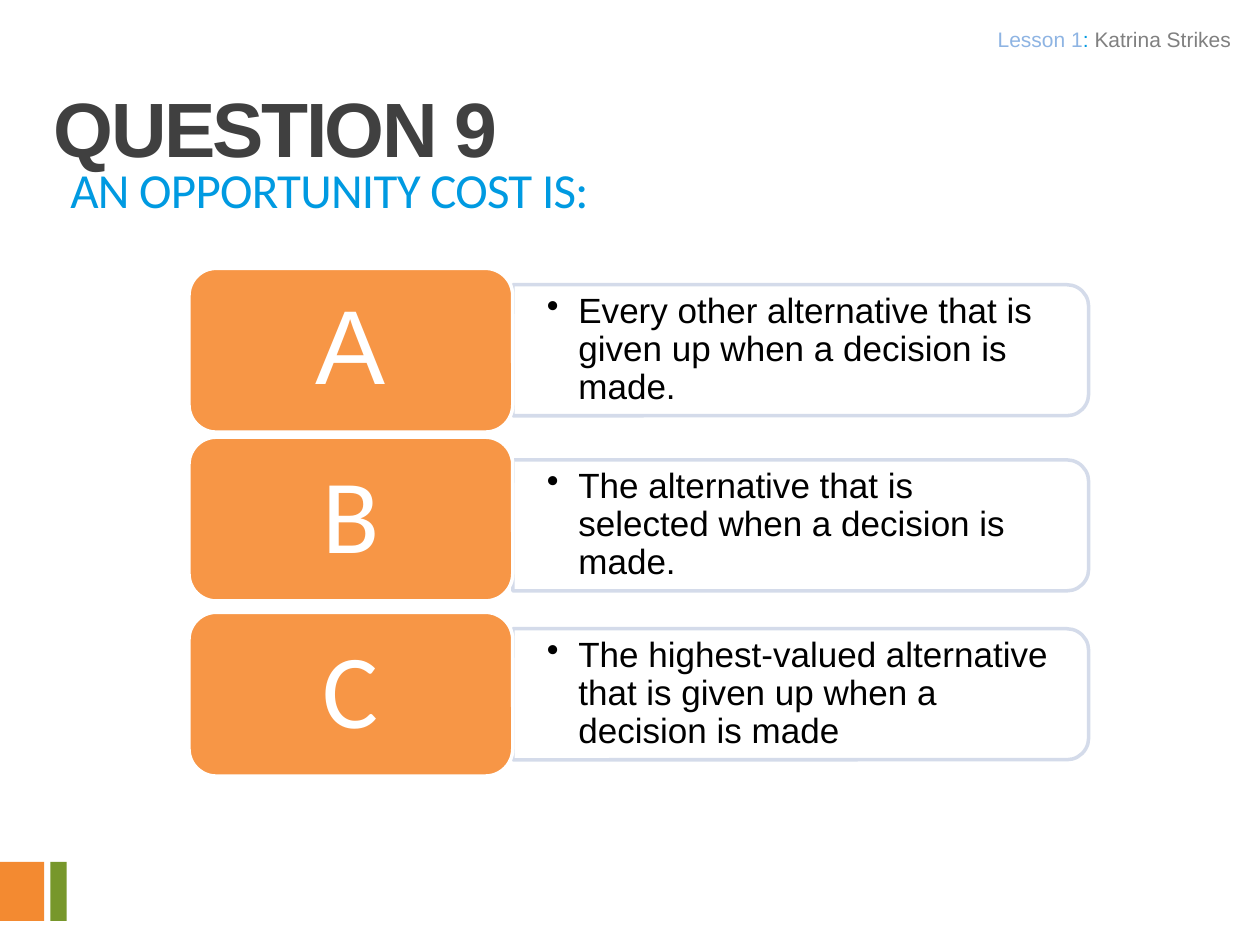
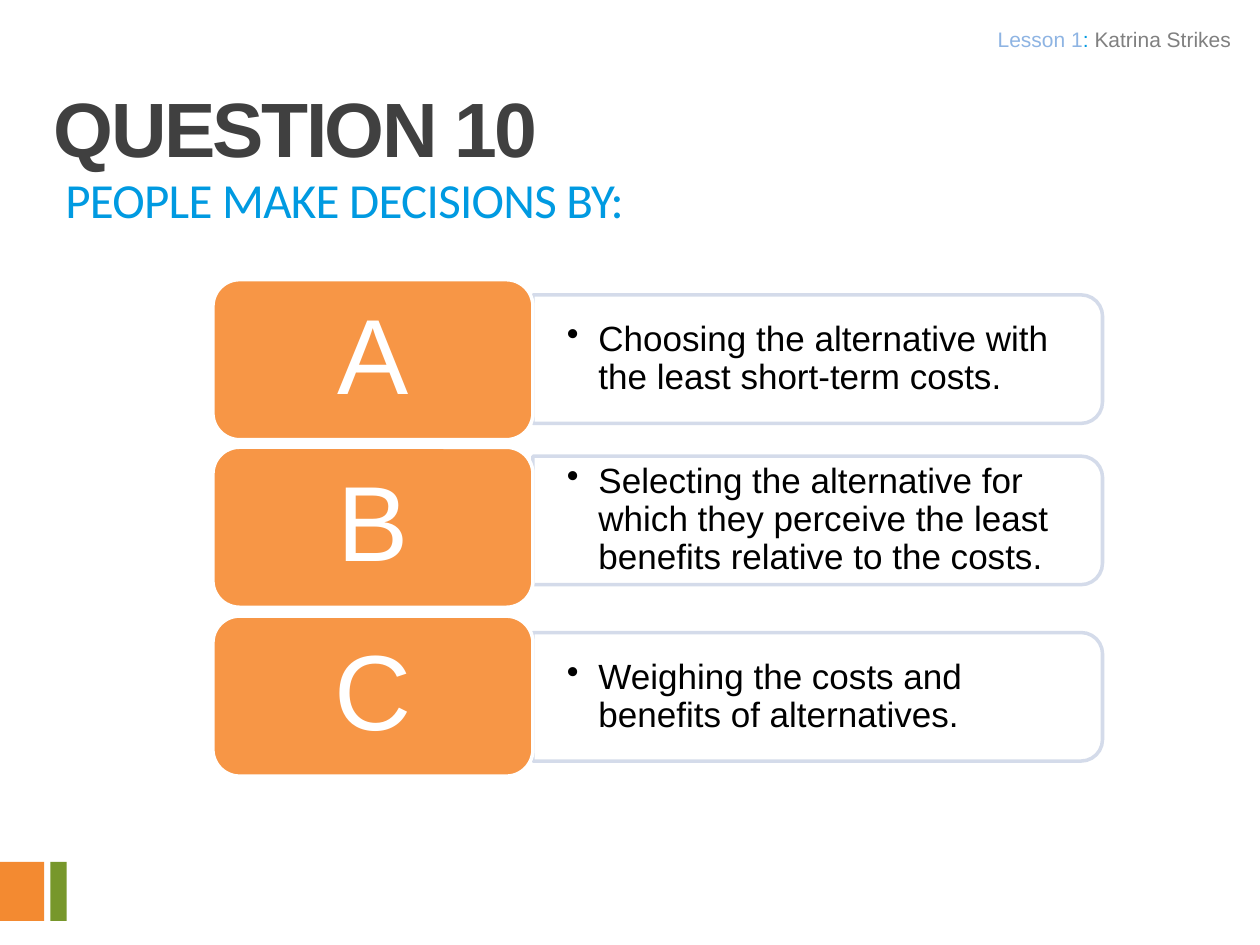
from lxml.etree import SubElement
from pptx import Presentation
from pptx.dml.color import RGBColor
from pptx.enum.shapes import MSO_SHAPE
from pptx.enum.text import MSO_ANCHOR, PP_ALIGN
from pptx.oxml.ns import qn
from pptx.util import Inches, Pt

COLORS = {
    "white": "FFFFFF", "black": "000000", "title": "404040",
    "prompt": "009AE1", "lesson": "8EB4E3", "topic": "808080",
    "label": "F79646", "panel_line": "D0D8E8",
    "corner_orange": "F38A31", "corner_green": "77972B",
}

# Each option: letter, letter font, label top, panel middle, answer
QUESTIONS = [
    {
        "title": "QUESTION 9",
        "prompt": "AN OPPORTUNITY COST IS:", "prompt_box": (0.46, 1.5, 9.5, 0.67),
        "left": 1.5, "label_size": (2.57, 1.3), "panel_size": (4.57, 1.04),
        "letter_points": 60,
        "options": [
            ("A", "Arial", 2.13, 2.78, "Every other alternative that is given up when a decision is made."),
            ("B", "Calibri", 3.47, 4.17, "The alternative that is selected when a decision is made."),
            ("C", "Calibri", 4.86, 5.51, "The highest-valued alternative that is given up when a decision is made"),
        ],
    },
    {
        "title": "QUESTION 10",
        "prompt": "PEOPLE MAKE DECISIONS BY:", "prompt_box": (0.42, 1.58, 9.42, 0.5),
        "left": 1.69, "label_size": (2.54, 1.27), "panel_size": (4.52, 1.02),
        "letter_points": 61,
        "options": [
            ("A", "Arial", 2.22, 2.85, "Choosing the alternative with the least short-term costs."),
            ("B", "Arial", 3.55, 4.13,
             "Selecting the alternative for which they perceive the least benefits relative to the costs."),
            ("C", "Arial", 4.89, 5.53, "Weighing the costs and benefits of alternatives."),
        ],
    },
]


def add_block(slide, kind, box, fill, line=None, opacity=None):
    block = slide.shapes.add_shape(kind, *map(Inches, box))
    block.shadow.inherit = False
    block.fill.solid()
    block.fill.fore_color.rgb = RGBColor.from_string(COLORS[fill])
    if line:
        block.line.color.rgb = RGBColor.from_string(COLORS[line])
        block.line.width = Pt(2)
    else:
        block.line.fill.background()
    if opacity:
        for color in block._element.spPr.iter(qn("a:srgbClr")):
            SubElement(color, qn("a:alpha"), val=str(opacity * 1000))
    return block


def add_textbox(slide, box):
    return slide.shapes.add_textbox(*map(Inches, box))


def write(holder, text, size, color="black", font="Arial", bold=False, align=PP_ALIGN.LEFT,
          anchor=MSO_ANCHOR.TOP, insets=(0.1, 0.05, 0.1, 0.05), line_spacing=None,
          tracking=None, bullet=False):
    """Write one paragraph; text is a string or a list of (text, color) pairs."""
    frame = holder.text_frame
    frame.word_wrap = True
    frame.vertical_anchor = anchor
    (frame.margin_left, frame.margin_top,
     frame.margin_right, frame.margin_bottom) = map(Inches, insets)
    paragraph = frame.paragraphs[0]
    paragraph.alignment = align
    if line_spacing:
        paragraph.line_spacing = line_spacing
    if bullet:
        properties = paragraph._p.get_or_add_pPr()
        properties.set("marL", str(Inches(0.25)))
        properties.set("indent", str(Inches(-0.25)))
        SubElement(properties, qn("a:buChar"), char="•")
    for words, tint in [(text, color)] if isinstance(text, str) else text:
        run = paragraph.add_run()
        run.text = words
        run.font.size, run.font.name, run.font.bold = Pt(size), font, bold
        run.font.color.rgb = RGBColor.from_string(COLORS[tint])
        if tracking:
            run._r.get_or_add_rPr().set("spc", str(int(tracking * 100)))


def add_corner_marks(slide):
    for left, width, color in [(0, 0.35, "corner_orange"), (0.4, 0.13, "corner_green")]:
        add_block(slide, MSO_SHAPE.RECTANGLE, (left, 6.84, width, 0.47), color)


def add_headings(slide, title, prompt, prompt_box):
    # Running header
    write(add_textbox(slide, (4, 0.17, 5.85, 0.32)),
          [("Lesson 1", "lesson"), (": ", "prompt"), ("Katrina Strikes", "topic")],
          12, align=PP_ALIGN.RIGHT, insets=(0.08, 0.04, 0.08, 0.04))
    # Question number and prompt
    write(add_textbox(slide, (0.33, 0.5, 9.5, 0.6)), title, 44, color="title", bold=True,
          line_spacing=Pt(59), tracking=-1.5)
    write(add_textbox(slide, prompt_box), prompt, 28, color="prompt", font="Calibri",
          line_spacing=Pt(13), tracking=-0.4)


def add_answer(slide, left, middle, size, answer):
    width, height = size
    # The panel is drawn upright, then turned so its round corners face right
    panel = add_block(slide, MSO_SHAPE.ROUND_2_SAME_RECTANGLE,
                      (left + (width - height) / 2, middle - width / 2, height, width),
                      "white", line="panel_line", opacity=90)
    panel.rotation = 90
    write(add_textbox(slide, (left, middle - height / 2 + 0.05, width - 0.05, height - 0.1)),
          answer, 20, anchor=MSO_ANCHOR.MIDDLE, insets=(0.27, 0.14, 0.26, 0.14),
          line_spacing=0.9, bullet=True)


def add_options(slide, question):
    left = question["left"]
    label_width, label_height = question["label_size"]
    for letter, font, top, middle, answer in question["options"]:
        add_answer(slide, left + label_width, middle, question["panel_size"], answer)
        label = add_block(slide, MSO_SHAPE.ROUNDED_RECTANGLE,
                          (left, top, label_width, label_height), "label", line="white")
        write(label, letter, question["letter_points"], color="white", font=font,
              align=PP_ALIGN.CENTER, anchor=MSO_ANCHOR.MIDDLE,
              insets=(0.25, 0.12, 0.25, 0.12), line_spacing=0.9)


def add_question_slide(deck, question):
    slide = deck.slides.add_slide(deck.slide_layouts[6])
    add_corner_marks(slide)
    add_options(slide, question)
    add_headings(slide, question["title"], question["prompt"], question["prompt_box"])


def main():
    deck = Presentation()
    deck.slide_width, deck.slide_height = Inches(10), Inches(7.5)
    for question in QUESTIONS:
        add_question_slide(deck, question)
    deck.save("out.pptx")


if __name__ == "__main__":
    main()
